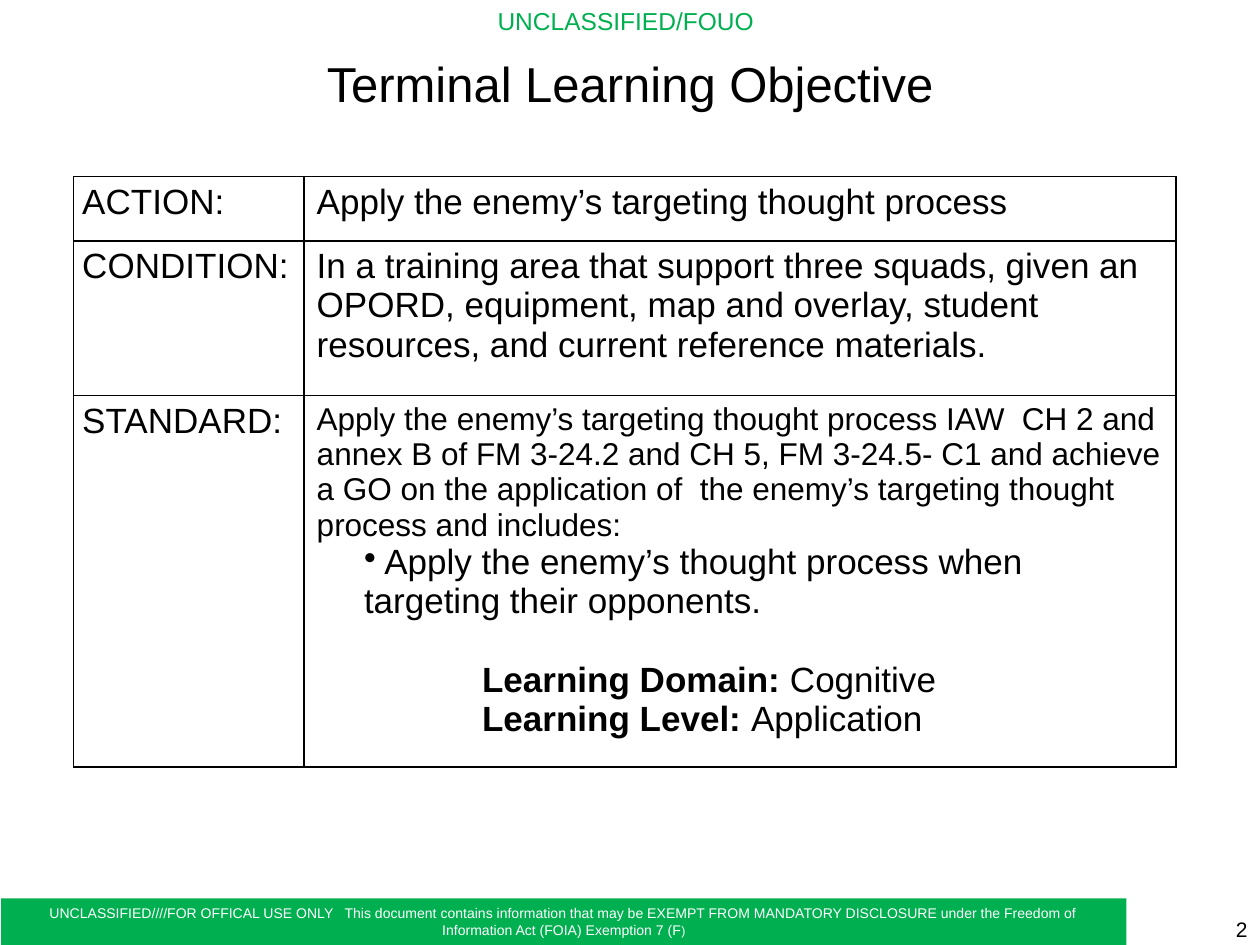
from dataclasses import dataclass

from lxml import etree
from pptx import Presentation
from pptx.dml.color import RGBColor
from pptx.enum.shapes import MSO_SHAPE
from pptx.enum.text import MSO_ANCHOR, PP_ALIGN
from pptx.oxml.ns import qn
from pptx.util import Pt

RECTANGLE = MSO_SHAPE.RECTANGLE
TOP, MIDDLE = MSO_ANCHOR.TOP, MSO_ANCHOR.MIDDLE
LEFT, CENTER, RIGHT = PP_ALIGN.LEFT, PP_ALIGN.CENTER, PP_ALIGN.RIGHT
TITLE_ONLY = 5
FONT = "Arial"
COLORS = {"text": "000000", "paper": "FFFFFF", "green": "00B050"}


@dataclass
class Span:
    text: str
    size: float = 20
    bold: bool = False
    color: str = "text"


@dataclass
class Line:
    spans: list[Span]
    align: PP_ALIGN = LEFT
    indent: float = 0
    space_before: float = 0
    line_spacing: float = 1.0
    bullet: str = ""


@dataclass
class Objective:
    label: str
    height: float
    lines: list[Line]


OBJECTIVES = [
    Objective("ACTION:", 36.7, [Line([Span("Apply the enemy’s targeting thought process")])]),
    Objective("CONDITION:", 88.3, [Line([Span(
        "In a training area that support three squads, given an OPORD, equipment, "
        "map and overlay, student resources, and current reference materials.")])]),
    Objective("STANDARD:", 199, [
        Line([Span(
            "Apply the enemy’s targeting thought process IAW  CH 2 and annex B of "
            "FM 3-24.2 and CH 5, FM 3-24.5- C1 and achieve a GO on the application of  "
            "the enemy’s targeting thought process and includes:", 18)]),
        Line([Span(" Apply the enemy’s thought process when targeting their opponents.")],
             indent=27, bullet="•"),
        Line([Span("Learning Domain: ", bold=True), Span("Cognitive")],
             indent=94.5, space_before=22.5),
        Line([Span("Learning Level: ", bold=True), Span("Application")], indent=94.5),
    ]),
]


def color(name: str) -> RGBColor:
    return RGBColor.from_string(COLORS[name])


def write_lines(text_frame, lines: list[Line]) -> None:
    for index, line in enumerate(lines):
        paragraph = text_frame.paragraphs[0] if index == 0 else text_frame.add_paragraph()
        paragraph.alignment = line.align
        paragraph.line_spacing = line.line_spacing
        paragraph.space_before = Pt(line.space_before)
        properties = paragraph._p.get_or_add_pPr()
        properties.set("marL", str(Pt(line.indent)))
        properties.set("indent", "0")
        if line.bullet:
            etree.SubElement(properties, qn("a:buChar"), char=line.bullet)
        else:
            etree.SubElement(properties, qn("a:buNone"))
        for span in line.spans:
            run = paragraph.add_run()
            run.text = span.text
            run.font.name = FONT
            run.font.size = Pt(span.size)
            run.font.bold = span.bold
            run.font.color.rgb = color(span.color)


def place(shape, left: float, top: float, width: float, height: float) -> None:
    shape.left, shape.top = Pt(left), Pt(top)
    shape.width, shape.height = Pt(width), Pt(height)


def add_label(slide, box: tuple, line: Line, anchor=TOP, wrap: bool = True) -> None:
    text_box = slide.shapes.add_textbox(*map(Pt, box))
    text_box.text_frame.word_wrap = wrap
    text_box.text_frame.vertical_anchor = anchor
    write_lines(text_box.text_frame, [line])


def add_banner(slide) -> None:
    banner = slide.shapes.add_shape(RECTANGLE, Pt(0.7), Pt(513.4), Pt(643), Pt(26.6))
    banner.shadow.inherit = False
    banner.fill.solid()
    banner.fill.fore_color.rgb = color("green")
    banner.line.fill.background()
    banner.text_frame.vertical_anchor = TOP
    notice = Span(
        "UNCLASSIFIED////FOR OFFICAL USE ONLY   This document contains information "
        "that may be EXEMPT FROM MANDATORY DISCLOSURE under the Freedom of "
        "Information Act (FOIA) Exemption 7 (F", 8, color="paper")
    write_lines(banner.text_frame, [Line([notice, Span(")", 7, color="paper")], CENTER)])


def style_cell(cell) -> None:
    properties = cell._tc.get_or_add_tcPr()
    for side in ("a:lnL", "a:lnR", "a:lnT", "a:lnB"):
        border = etree.SubElement(properties, qn(side), w=str(Pt(1)))
        fill = etree.SubElement(border, qn("a:solidFill"))
        etree.SubElement(fill, qn("a:srgbClr"), val=COLORS["text"])
    cell.fill.solid()
    cell.fill.fore_color.rgb = color("paper")


def add_objectives(slide) -> None:
    height = sum(objective.height for objective in OBJECTIVES)
    table = slide.shapes.add_table(
        len(OBJECTIVES), 2, Pt(42), Pt(101), Pt(630), Pt(height)).table
    table.first_row = table.horz_banding = False
    table.columns[0].width, table.columns[1].width = Pt(131.8), Pt(498.2)
    for row, objective in enumerate(OBJECTIVES):
        table.rows[row].height = Pt(objective.height)
        label, content = table.cell(row, 0), table.cell(row, 1)
        style_cell(label)
        style_cell(content)
        label.margin_left = label.margin_right = Pt(5)
        label.margin_top = label.margin_bottom = Pt(0)
        write_lines(label.text_frame, [Line([Span(objective.label)], line_spacing=1.15)])
        write_lines(content.text_frame, objective.lines)


def main() -> None:
    presentation = Presentation()
    presentation.slide_width, presentation.slide_height = Pt(720), Pt(540)
    slide = presentation.slides.add_slide(presentation.slide_layouts[TITLE_ONLY])

    title = slide.shapes.title
    place(title, 36, 21.6, 648, 52)
    title.text_frame.vertical_anchor = MIDDLE
    write_lines(title.text_frame, [Line([Span("Terminal Learning Objective", 28)], CENTER)])

    add_label(slide, (277.2, 0, 165, 24.5),
              Line([Span("UNCLASSIFIED/FOUO", 14, color="green")]), wrap=False)
    add_banner(slide)
    add_label(slide, (552, 522, 168, 18), Line([Span("2", 12)], RIGHT), MIDDLE)
    add_objectives(slide)
    presentation.save("out.pptx")


if __name__ == "__main__":
    main()
